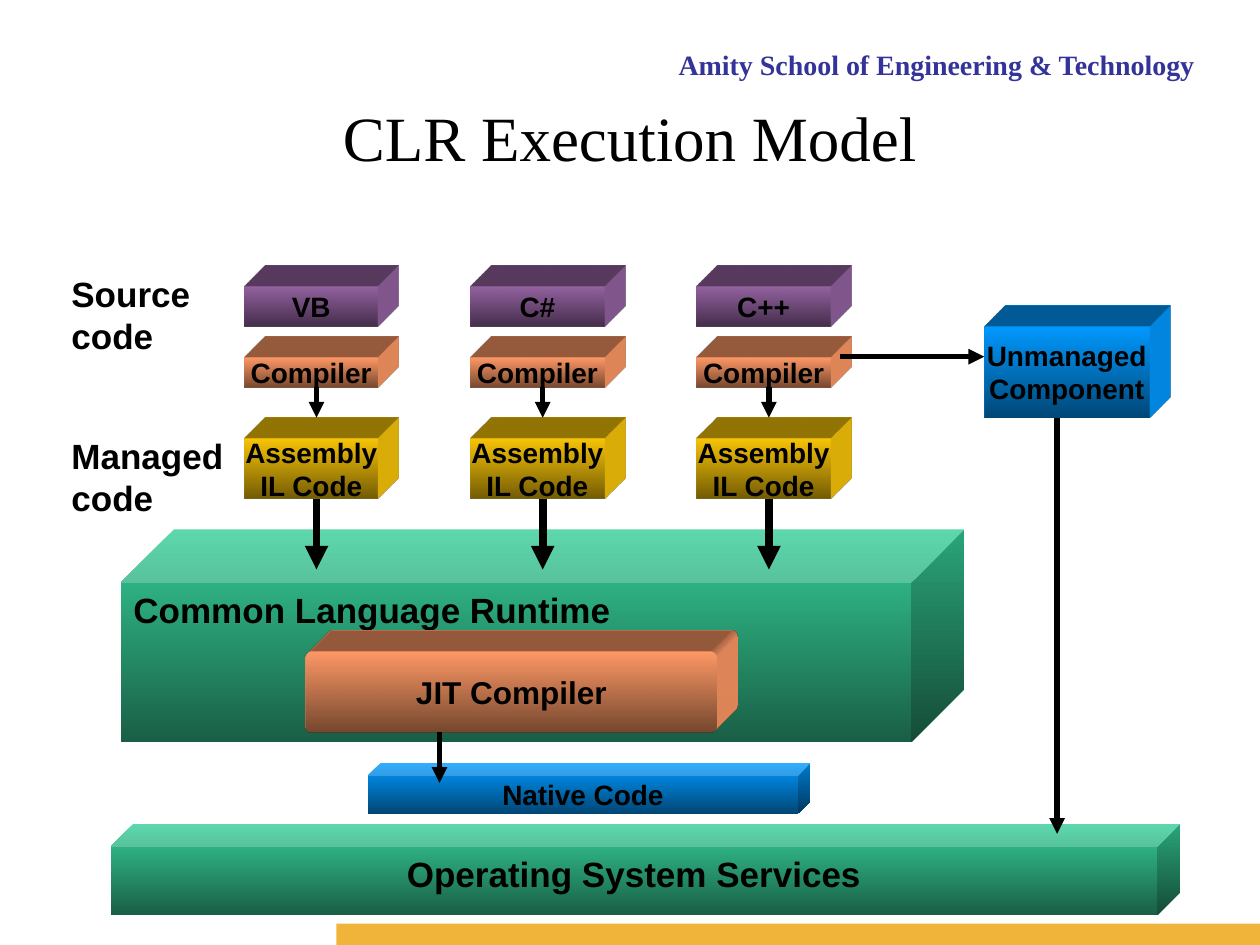
from dataclasses import dataclass
from lxml.etree import SubElement
from pptx import Presentation
from pptx.dml.color import RGBColor as Rgb
from pptx.enum.shapes import MSO_CONNECTOR as Link, MSO_SHAPE as Shape
from pptx.enum.text import MSO_ANCHOR as Anchor, PP_ALIGN as Align
from pptx.oxml import parse_xml
from pptx.oxml.ns import qn
from pptx.util import Cm, Pt


@dataclass(frozen=True)
class Theme:
    sans: str = "Arial"
    serif: str = "Times New Roman"
    ink: str = "000000"
    navy: str = "333399"
    bar: str = "F1B43B"
    # Light and dark end of each gradient
    plum: tuple = ("9362A0", "442D4A")
    coral: tuple = ("FF9966", "76472F")
    gold: tuple = ("F8C508", "735B04")
    green: tuple = ("35CD97", "195F46")
    blue: tuple = ("0099FF", "004776")
    title: int = 36
    large: int = 20
    mid: int = 18
    small: int = 16
    thin: float = 3
    thick: float = 4.5


T = Theme()
NS = "http://schemas.openxmlformats.org/drawingml/2006/main"


def put(shape, text, size=T.small, font=T.sans, color=T.ink, bold=True,
        align=Align.CENTER, anchor=Anchor.MIDDLE, wrap=False):
    """Write text into a shape, one paragraph per line."""
    frame = shape.text_frame
    frame.word_wrap = wrap
    frame.vertical_anchor = anchor
    frame.text = text
    for para in frame.paragraphs:
        para.alignment = align
        face = para.font
        face.name, face.size, face.bold = font, Pt(size), bold
        face.color.rgb = Rgb.from_string(color)


def label(slide, box, text, **form):
    put(slide.shapes.add_textbox(*map(Cm, box)), text, **form)


def block(slide, kind, box, tones):
    """Add a shape without outline, filled from top to bottom."""
    shape = slide.shapes.add_shape(kind, *map(Cm, box))
    shape.shadow.inherit = False
    shape.line.fill.background()
    shape.fill.gradient()
    shape.fill.gradient_angle = 270
    for stop, tone, spot in zip(shape.fill.gradient_stops, tones, (0, 1)):
        stop.color.rgb = Rgb.from_string(tone)
        stop.position = spot
    return shape


def cube(slide, box, tones, text, **form):
    put(block(slide, Shape.CUBE, box, tones), text, wrap=True, **form)


def slab(slide, box, tones, text, curve=0, **form):
    """Add a box with depth toward the top right."""
    shape = block(slide, Shape.ROUNDED_RECTANGLE, box, tones)
    shape.adjustments[0] = curve
    props = shape.element.spPr
    props.append(parse_xml(
        f'<a:scene3d xmlns:a="{NS}"><a:camera prst="legacyObliqueTopRight"/>'
        '<a:lightRig rig="legacyFlat3" dir="b"/></a:scene3d>'))
    props.append(parse_xml(
        f'<a:sp3d xmlns:a="{NS}" extrusionH="430200" prstMaterial="legacyMatte">'
        '<a:bevelT w="13500" h="13500" prst="angle"/>'
        '<a:bevelB w="13500" h="13500" prst="angle"/>'
        f'<a:extrusionClr><a:srgbClr val="{tones[0]}"/></a:extrusionClr></a:sp3d>'))
    put(shape, text, **form)


def arrow(slide, x, y, dx=0, dy=0, width=T.thin):
    ends = map(Cm, (x, y, x + dx, y + dy))
    line = slide.shapes.add_connector(Link.STRAIGHT, *ends)
    line.line.color.rgb = Rgb.from_string(T.ink)
    line.line.width = Pt(width)
    SubElement(line.line._get_or_add_ln(), qn("a:tailEnd"), type="triangle")
    SubElement(line.element.spPr, qn("a:effectLst"))


def head(slide, box):
    """School name, title and the bar at the foot."""
    x, y, w, h = box
    label(slide, (x + 11.43, y + 0.84, 12.9, 0.84),
          "Amity School of Engineering & Technology", font=T.serif,
          color=T.navy, align=Align.RIGHT, anchor=Anchor.TOP, wrap=True)
    bar = slide.shapes.add_shape(
        Shape.RECTANGLE, *map(Cm, (x + 6.78, y + h - 0.43, w - 6.78, 0.43)))
    bar.shadow.inherit = False
    bar.line.fill.background()
    bar.fill.solid()
    bar.fill.fore_color.rgb = Rgb.from_string(T.bar)
    label(slide, (x + 1.27, y + 1.65, w - 2.54, 2.2), "CLR Execution Model",
          size=T.title, font=T.serif, bold=False, wrap=True)


def runtime(slide, box):
    """Runtime with its compiler, and the native code below."""
    x, y, w, h = box
    cube(slide, box, T.green, "Common Language Runtime", size=T.large,
         align=Align.LEFT, anchor=Anchor.TOP)
    slab(slide, (x + 3.73, y + 2.47, 8.28, 1.62), T.coral, "JIT Compiler",
         curve=0.08, size=T.mid)
    cube(slide, (x + 4.98, y + h + 0.42, 8.92, 1.02), T.blue, "Native Code")
    arrow(slide, x + 6.42, y + 4.09, dy=1.02)


def lane(slide, box, name):
    """One language, from its source to the assembly."""
    x, y, w, _ = box
    slab(slide, (x, y, w, 0.81), T.plum, name)
    slab(slide, (x, y + 1.43, w, 0.61), T.coral, "Compiler")
    slab(slide, (x, y + 3.07, w, 1.22), T.gold, "Assembly\nIL Code")
    mid = x + 1.45
    arrow(slide, mid, y + 2.04, dy=0.61)
    arrow(slide, mid, y + 4.29, dy=1.42, width=T.thick)


def lanes(slide, box):
    """Row labels and three equal lanes."""
    x, y, w, h = box
    row = dict(size=T.large, align=Align.LEFT, anchor=Anchor.TOP)
    label(slide, (x, y, 3.53, 2.03), "Source code", wrap=True, **row)
    label(slide, (x, y + 3.28, 3.71, 2.03), "Managed\ncode", **row)
    step = (w - 3.74) / 3
    for i, name in enumerate(("VB", "C#", "C++")):
        lane(slide, (x + 3.74 + i * step, y + 0.41, 2.69, h), name)


def side(slide, box):
    """Unmanaged path down to the system."""
    x, y, w, h = box
    arrow(slide, x, y + 0.61, dx=2.9)
    slab(slide, (x + 2.9, y, w - 2.9, 1.83), T.blue, "Unmanaged\nComponent")
    arrow(slide, x + 4.37, y + 1.85, dy=h - 1.85)


def main():
    deck = Presentation()
    deck.slide_width, deck.slide_height = Cm(25.4), Cm(19.05)
    slide = deck.slides.add_slide(deck.slide_layouts[6])
    head(slide, (0, 0, 25.4, 19.05))
    cube(slide, (2.23, 16.61, 21.56, 1.83), T.green,
         "Operating System Services", size=T.large, anchor=Anchor.TOP)
    runtime(slide, (2.44, 10.67, 17, 4.29))
    lanes(slide, (1.19, 5.36, 17.42, 6.12))
    side(slide, (16.94, 6.58, 6.23, 10.23))
    deck.save("out.pptx")


if __name__ == "__main__":
    main()
